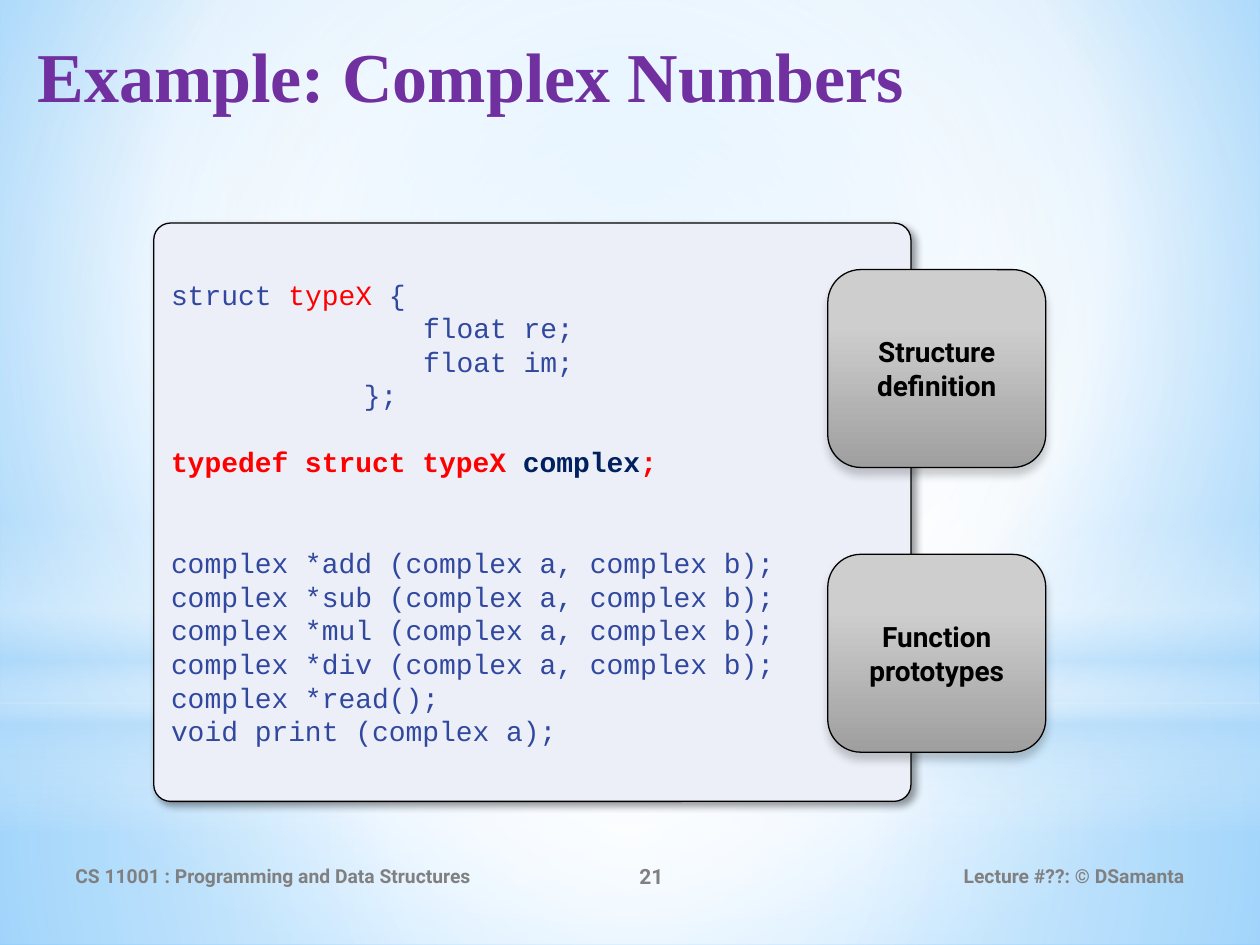
from lxml import etree
from pptx import Presentation, util as u
from pptx.dml.color import RGBColor
from pptx.enum import shapes, text
from pptx.oxml.ns import qn

WIDTH, HEIGHT = 10, 7.5
CODE_BLUE, RED, NAVY = "31489F", "FF0000", "002060"
LINE_PITCH = 19.2
CODE = [
    ([("struct ", CODE_BLUE), ("typeX ", RED), ("{", CODE_BLUE)], 0, 0, False),
    ([("float re;", CODE_BLUE)], 2, 0, False),
    ([("float im;", CODE_BLUE)], 2, 0, False),
    ([("};", CODE_BLUE)], 1.53, 0, False),
    ([("typedef struct typeX ", RED), ("complex", NAVY), (";", RED)], 0, 1, True),
    ([("complex *add (complex a, complex b);", CODE_BLUE)], 0, 2, False),
    ([("complex *sub (complex a, complex b);", CODE_BLUE)], 0, 0, False),
    ([("complex *mul (complex a, complex b);", CODE_BLUE)], 0, 0, False),
    ([("complex *div (complex a, complex b);", CODE_BLUE)], 0, 0, False),
    ([("complex *read();", CODE_BLUE)], 0, 0, False),
    ([("void print (complex a);", CODE_BLUE)], 0, 0, False),
]


def color(code):
    return RGBColor.from_string(code)


def child(parent, tag, **attributes):
    return etree.SubElement(parent, qn(tag), {k: str(v) for k, v in attributes.items()})


def paint_gradient(fill, owner, stops, focus=None):
    fill.gradient()
    gradient = next(owner.iter(qn("a:gradFill")))
    for part in list(gradient):
        gradient.remove(part)
    stop_list = child(gradient, "a:gsLst")
    for position, code, opacity in stops:
        stop = child(stop_list, "a:gs", pos=position * 1000)
        tint = child(stop, "a:srgbClr", val=code)
        if opacity < 100:
            child(tint, "a:alpha", val=opacity * 1000)
    if focus:
        circle = child(gradient, "a:path", path="circle")
        sides = {side: share * 1000 for side, share in zip("ltrb", focus)}
        child(circle, "a:fillToRect", **sides)
    else:
        child(gradient, "a:lin", ang=90 * 60000, scaled=0)


def add_panel(slide, box, kind):
    panel = slide.shapes.add_shape(kind, *map(u.Inches, box))
    panel.shadow.inherit = False
    panel.line.fill.background()
    return panel


def add_card(slide, box, opacity, blur, distance, angle):
    card = add_panel(slide, box, shapes.MSO_SHAPE.ROUNDED_RECTANGLE)
    card.line.color.rgb = color("000000")
    card.line.width = u.Pt(0.75)
    effects = card._element.spPr.find(qn("a:effectLst"))
    shadow = child(effects, "a:outerShdw", blurRad=u.Pt(blur), dist=u.Pt(distance),
                   dir=angle * 60000, algn="ctr", rotWithShape=0)
    child(child(shadow, "a:srgbClr", val="000000"), "a:alpha", val=opacity * 1000)
    card.text_frame.word_wrap = True
    card.text_frame.vertical_anchor = text.MSO_ANCHOR.MIDDLE
    return card


def style(paragraph, name, size, code, bold, align=text.PP_ALIGN.LEFT):
    paragraph.alignment = align
    font = paragraph.font
    font.name, font.size, font.bold = name, u.Pt(size), bold
    font.color.rgb = color(code)


def add_backdrop(slide):
    paint_gradient(slide.background.fill, slide._element,
                   [(0, "9ED5FF", 100), (60, "FFFFFF", 100), (100, "5BB9FF", 100)],
                   (20, 10, 20, 60))
    center = (50, 50, 50, 50)
    rectangle, oval = shapes.MSO_SHAPE.RECTANGLE, shapes.MSO_SHAPE.OVAL
    glows = [
        (rectangle, 5.58, 1.92, center,
         [(0, "FFFFFF", 91), (37, "FFFFFF", 76), (100, "B4DCFA", 79)]),
        (rectangle, 0, 5.58, center,
         [(0, "FFFFFF", 89), (48, "FFFFFF", 62), (100, "B4DCFA", 79)]),
        (rectangle, 4.12, 2.5, None,
         [(0, "FFFFFF", 0), (29, "FFFFFF", 30), (45, "B4DCFA", 40),
          (55, "FFFFFF", 26), (65, "B4DCFA", 60), (100, "FFFFFF", 0)]),
        (oval, 1.75, 5.58, center, [(0, "FFFFFF", 100), (56, "FFFFFF", 0)]),
    ]
    for kind, top, height, focus, stops in glows:
        glow = add_panel(slide, (0, top, WIDTH, height), kind)
        paint_gradient(glow.fill, glow._element, stops, focus)


def add_label(slide, box, words, name, size, code, align, anchor):
    frame = slide.shapes.add_textbox(*map(u.Inches, box)).text_frame
    frame.word_wrap = True
    frame.vertical_anchor = anchor
    frame.text = words
    style(frame.paragraphs[0], name, size, code, True, align)


def add_footer(slide, top, height):
    for left, width, words, size, align in [
        (0.5, 3.67, "CS 11001 : Programming and Data Structures", 11, text.PP_ALIGN.LEFT),
        (4.17, 2, "21", 12, text.PP_ALIGN.CENTER),
        (6.75, 2.75, "Lecture #??: © DSamanta", 11, text.PP_ALIGN.RIGHT),
    ]:
        add_label(slide, (left, top, width, height), words, "Roboto", size,
                  "808080", align, text.MSO_ANCHOR.MIDDLE)


def add_code(slide, box):
    card = add_card(slide, box, 40, 4, 3, 45)
    card.adjustments[0] = 0.029
    card.fill.solid()
    card.fill.fore_color.rgb = color("ECEFF8")
    frame = card.text_frame
    for number, (pieces, indent, gap, bold) in enumerate(CODE):
        line = frame.add_paragraph() if number else frame.paragraphs[0]
        style(line, "Courier New", 16, CODE_BLUE, bold)
        line.line_spacing = u.Pt(LINE_PITCH)
        line.space_before = u.Pt(gap * LINE_PITCH)
        line._p.get_or_add_pPr().set("marL", str(u.Inches(indent)))
        for words, code in pieces:
            run = line.add_run()
            run.text = words
            run.font.color.rgb = color(code)


def add_callout(slide, box, words):
    card = add_card(slide, box, 20, 5, 4, 90)
    paint_gradient(card.fill, card._element, [(28, "CECECE", 100), (100, "9F9F9F", 100)])
    card.text_frame.text = words
    for line in card.text_frame.paragraphs:
        style(line, "Roboto", 16, "000000", True, text.PP_ALIGN.CENTER)


def main():
    deck = Presentation()
    deck.slide_width, deck.slide_height = u.Inches(WIDTH), u.Inches(HEIGHT)
    slide = deck.slides.add_slide(deck.slide_layouts[6])
    add_backdrop(slide)
    add_label(slide, (0.2, 0.21, 9.53, 1.25), "Example: Complex Numbers", "Times New Roman",
              40, "7030A0", text.PP_ALIGN.LEFT, text.MSO_ANCHOR.TOP)
    add_footer(slide, 6.75, 0.4)
    add_code(slide, (1.22, 1.77, 6.01, 4.59))
    for top, words in [(4.4, "Function\nprototypes"), (2.14, "Structure\ndefinition")]:
        add_callout(slide, (6.57, top, 1.73, 1.57), words)
    deck.save("out.pptx")


if __name__ == "__main__":
    main()
